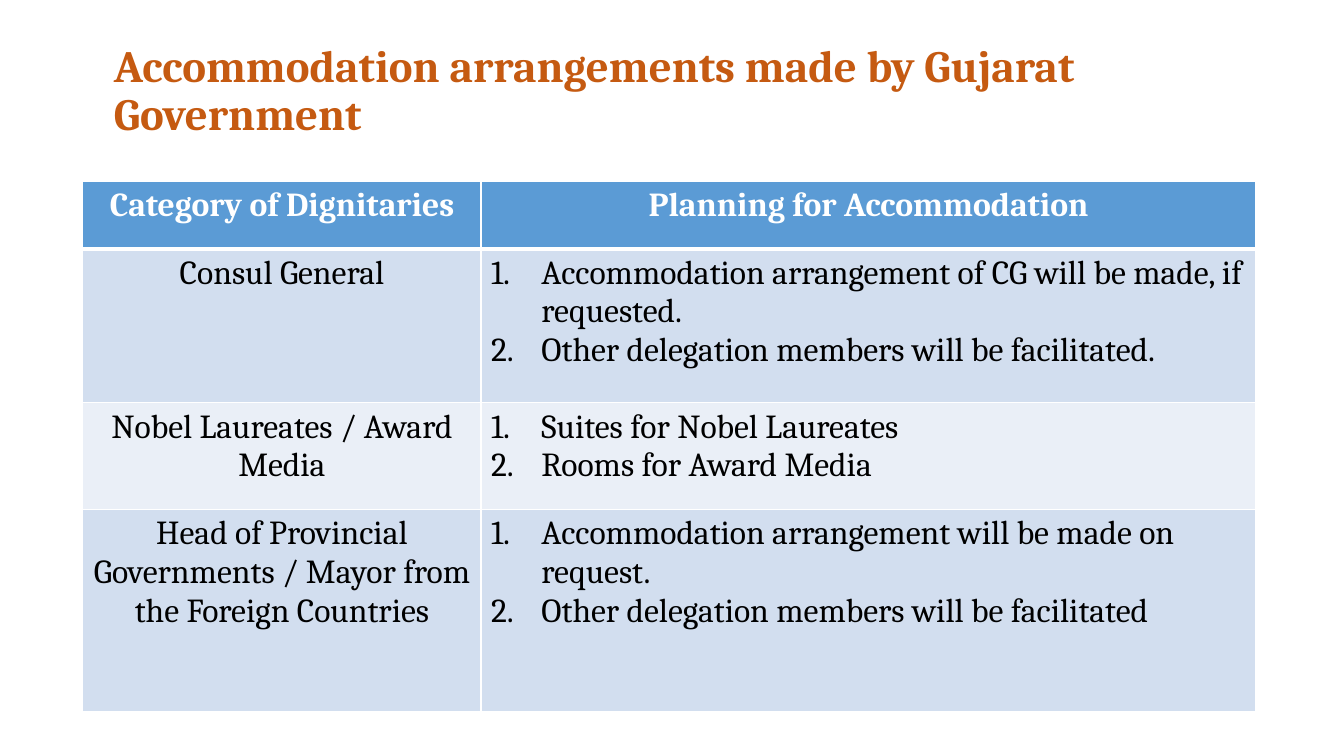
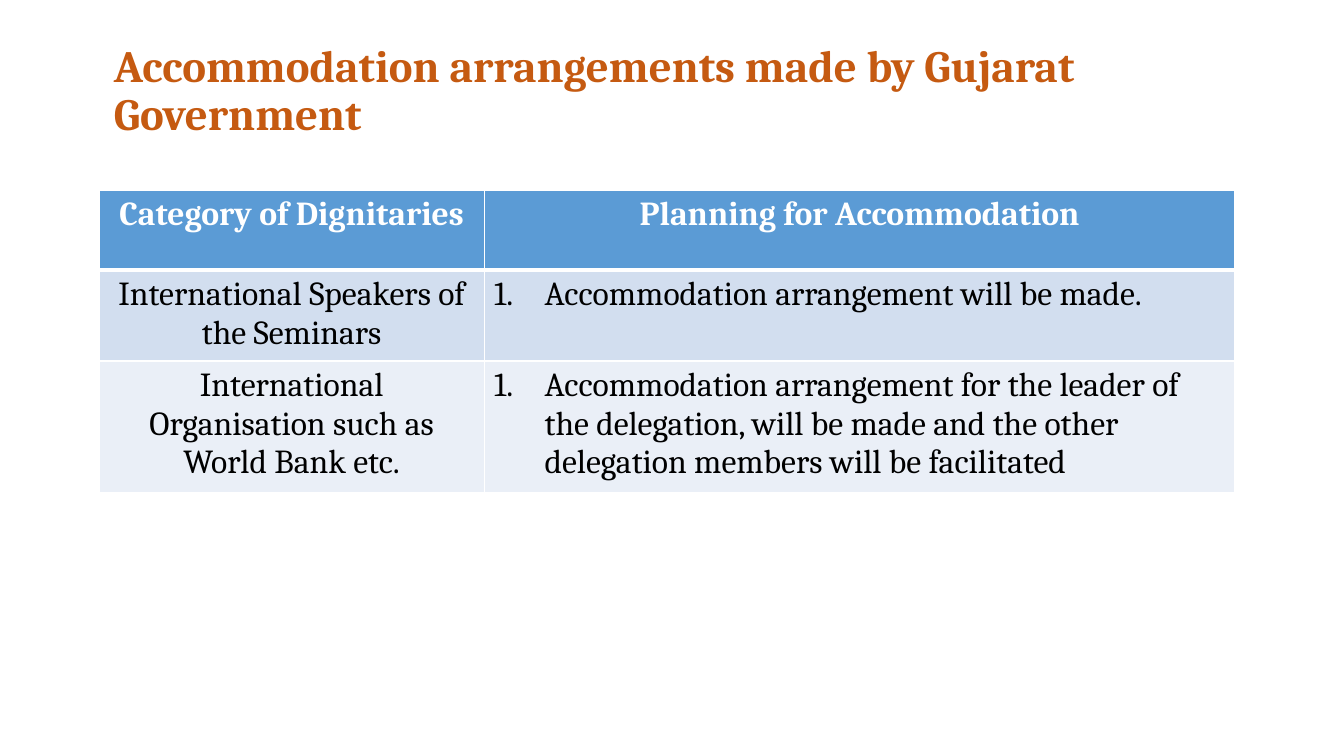
from dataclasses import dataclass

from lxml.etree import SubElement
from pptx import Presentation
from pptx.dml.color import RGBColor
from pptx.enum.text import MSO_ANCHOR, PP_ALIGN
from pptx.oxml.ns import qn
from pptx.util import Pt

# Shared style
FONT = "Cambria"
TITLE_COLOR = RGBColor(0xC5, 0x5A, 0x11)
HEADER_FILL = RGBColor(0x5B, 0x9B, 0xD5)
BAND_FILLS = (RGBColor(0xD2, 0xDE, 0xEF), RGBColor(0xEA, 0xEF, 0xF7))
WHITE = RGBColor(0xFF, 0xFF, 0xFF)
BLACK = RGBColor(0x00, 0x00, 0x00)
LIST_INDENT = Pt(36)
THIN, THICK = Pt(1), Pt(3)

# Shared wording
TITLE = "Accommodation arrangements made by Gujarat Government"
HEADERS = ("Category of Dignitaries", "Planning for Accommodation")


@dataclass(frozen=True)
class Arrangement:
    category: str
    plans: tuple[str, ...]
    height: float


@dataclass(frozen=True)
class AccommodationTable:
    left: float
    top: float
    column_widths: tuple[float, float]
    header_height: float
    arrangements: tuple[Arrangement, ...]


TABLES = (
    AccommodationTable(59.2, 129.6, (284.4, 553.6), 48.2, (
        Arrangement("Consul General", (
            "Accommodation arrangement of CG will be made, if requested.",
            "Other delegation members will be facilitated.",
        ), 110),
        Arrangement("Nobel Laureates / Award Media", (
            "Suites for Nobel Laureates",
            "Rooms for Award Media",
        ), 76.3),
        Arrangement("Head of Provincial Governments / Mayor from the Foreign Countries", (
            "Accommodation arrangement will be made on request.",
            "Other delegation members will be facilitated",
        ), 144),
    )),
    AccommodationTable(70.8, 136.2, (275, 536.4), 56.9, (
        Arrangement("International Speakers of the Seminars", (
            "Accommodation arrangement will be made.",
        ), 62.5),
        Arrangement("International Organisation such as World Bank etc.", (
            "Accommodation arrangement for the leader of the delegation, will be made "
            "and the other delegation members will be facilitated",
        ), 89.5),
    )),
)


def number_paragraph(paragraph) -> None:
    """Give a paragraph automatic numbering with a hanging indent."""
    properties = paragraph._p.get_or_add_pPr()
    properties.set("marL", str(LIST_INDENT))
    properties.set("indent", str(-LIST_INDENT))
    SubElement(properties, qn("a:buFont"), typeface="+mj-lt")
    SubElement(properties, qn("a:buAutoNum"), type="arabicPeriod")


def write_text(text_frame, *texts: str, size: float = 24, color: RGBColor = BLACK,
               bold: bool = False, align: PP_ALIGN = PP_ALIGN.LEFT,
               line_spacing: float = 1.0, numbered: bool = False) -> None:
    """Write one paragraph for each text."""
    text_frame.word_wrap = True
    for index, text in enumerate(texts):
        paragraph = text_frame.paragraphs[0] if index == 0 else text_frame.add_paragraph()
        paragraph.alignment = align
        paragraph.line_spacing = line_spacing
        if numbered:
            number_paragraph(paragraph)
        run = paragraph.add_run()
        run.text = text
        run.font.name = FONT
        run.font.size = Pt(size)
        run.font.bold = bold
        run.font.color.rgb = color


def style_cell(cell, fill: RGBColor, top: int = THIN, bottom: int = THIN) -> None:
    """Set the borders and the fill of a cell."""
    properties = cell._tc.get_or_add_tcPr()
    for side, width in (("L", THIN), ("R", THIN), ("T", top), ("B", bottom)):
        line = SubElement(properties, qn(f"a:ln{side}"), w=str(width))
        line_fill = SubElement(line, qn("a:solidFill"))
        SubElement(line_fill, qn("a:srgbClr"), val=str(WHITE))
    cell.fill.solid()
    cell.fill.fore_color.rgb = fill


def add_title(slide) -> None:
    box = slide.shapes.add_textbox(Pt(74.2), Pt(27.4), Pt(787.7), Pt(42.5))
    box.text_frame.vertical_anchor = MSO_ANCHOR.TOP
    write_text(box.text_frame, TITLE, size=32, color=TITLE_COLOR, bold=True, line_spacing=0.9)


def add_accommodation_table(slide, content: AccommodationTable) -> None:
    heights = (content.header_height, *(item.height for item in content.arrangements))
    table = slide.shapes.add_table(
        len(heights), len(HEADERS), Pt(content.left), Pt(content.top),
        Pt(sum(content.column_widths)), Pt(sum(heights))).table
    table.horz_banding = False
    for column, width in zip(table.columns, content.column_widths):
        column.width = Pt(width)
    for row, height in zip(table.rows, heights):
        row.height = Pt(height)

    # Header row
    for cell, header in zip(table.rows[0].cells, HEADERS):
        style_cell(cell, HEADER_FILL, bottom=THICK)
        write_text(cell.text_frame, header, color=WHITE, bold=True, align=PP_ALIGN.CENTER)

    # Banded rows
    for index, item in enumerate(content.arrangements):
        category_cell, plan_cell = table.rows[index + 1].cells
        for cell in (category_cell, plan_cell):
            style_cell(cell, BAND_FILLS[index % 2], top=THICK if index == 0 else THIN)
        write_text(category_cell.text_frame, item.category, align=PP_ALIGN.CENTER)
        write_text(plan_cell.text_frame, *item.plans, numbered=True)


def main() -> None:
    presentation = Presentation()
    presentation.slide_width, presentation.slide_height = Pt(960), Pt(540)
    blank_layout = presentation.slide_layouts[6]
    for content in TABLES:
        slide = presentation.slides.add_slide(blank_layout)
        add_title(slide)
        add_accommodation_table(slide, content)
    presentation.save("out.pptx")


if __name__ == "__main__":
    main()
